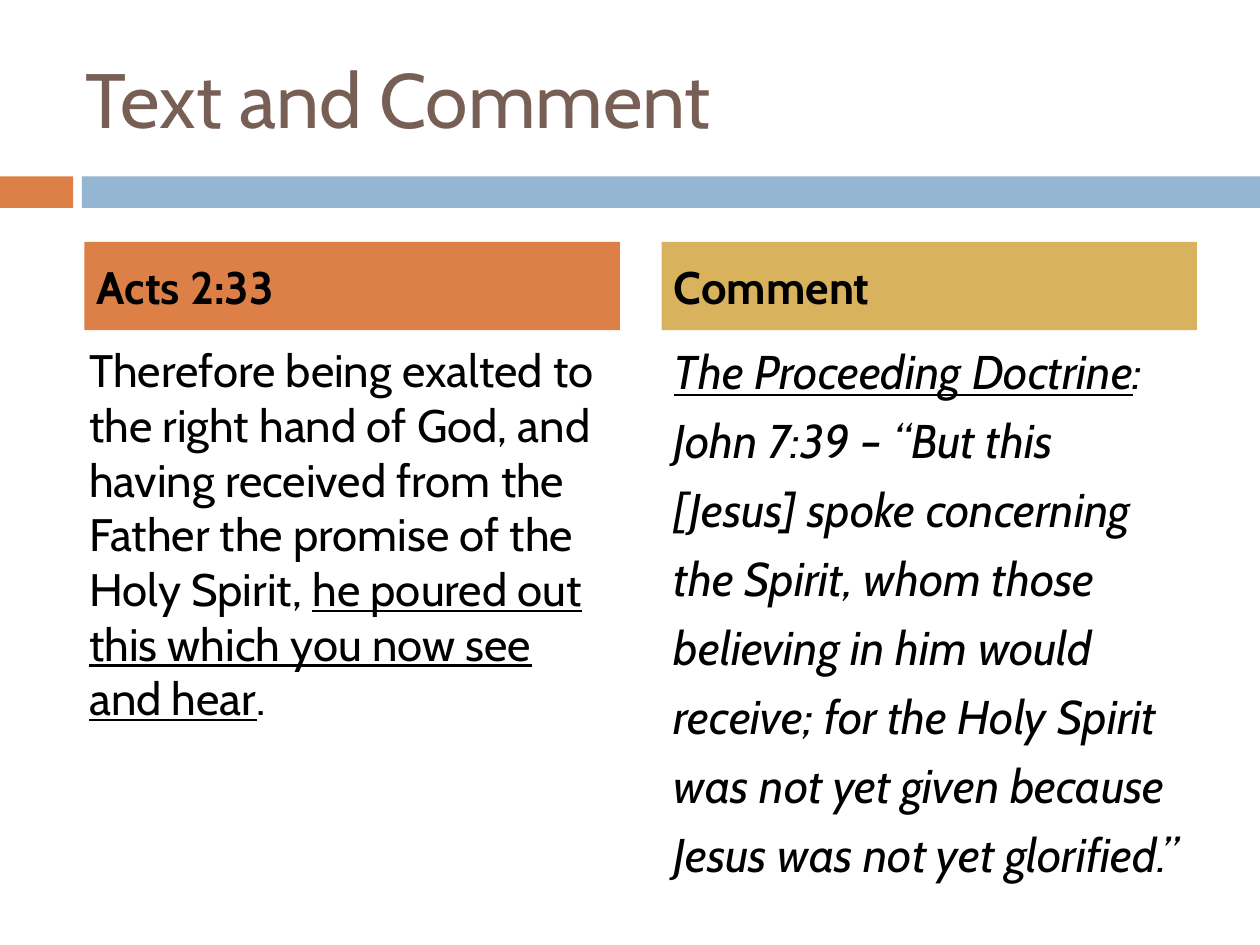
from pptx import Presentation
from pptx.dml.color import RGBColor
from pptx.enum import shapes, text
from pptx.util import Inches, Pt

FONT = "Cabin"
ORANGE = RGBColor(0xDD, 0x80, 0x47)
BLUE = RGBColor(0x94, 0xB6, 0xD2)
GOLD = RGBColor(0xD8, 0xB2, 0x5C)
BROWN = RGBColor(0x77, 0x5F, 0x55)
BLACK = RGBColor(0, 0, 0)
HANG = Inches(0.35)

# Each paragraph is a list of (text, font format) runs.
TITLE = [[("Text and Comment", {"size": Pt(44)})]]
BARS = [((0, 1.4, 0.58, 0.25), ORANGE), ((0.65, 1.4, 9.35, 0.25), BLUE)]
HEADS = [("Acts 2:33", 0.67, ORANGE), ("Comment", 5.25, GOLD)]

plain = {"size": Pt(26)}
VERSE = [[
    ("\t", {"size": Pt(29), "bold": True}),
    ("Therefore being exalted to the right hand of God, and having received "
     "from the Father the promise of the Holy Spirit, ", plain),
    ("he poured out this which you now see and hear",
     {**plain, "underline": True}),
    (".", plain),
]]

slant = {"size": Pt(27), "italic": True}
LINES = [
    "John 7:39 – “But this",
    "[Jesus] spoke concerning",
    "the Spirit, whom those",
    "believing in him would",
    "receive; for the Holy Spirit",
    "was not yet given because",
    "Jesus was not yet glorified.”",
]
NOTE = [[("The Proceeding Doctrine", {**slant, "underline": True}),
         (":", slant)]] + [[(line, slant)] for line in LINES]


def write(shape, paras, color=BLACK, middle=False, hang=False, space=7):
    frame = shape.text_frame
    frame.word_wrap = True
    anchor = text.MSO_ANCHOR
    frame.vertical_anchor = anchor.MIDDLE if middle else anchor.TOP
    if hang:
        frame.margin_right = 0
    for i, runs in enumerate(paras):
        para = frame.add_paragraph() if i else frame.paragraphs[0]
        para.alignment = text.PP_ALIGN.LEFT
        para.space_before = Pt(space)
        if hang:
            props = para._p.get_or_add_pPr()
            props.set("marL", str(HANG))
            props.set("indent", str(-HANG))
        for words, style in runs:
            run = para.add_run()
            run.text = words
            run.font.name = FONT
            run.font.color.rgb = color
            for key, value in style.items():
                setattr(run.font, key, value)


def block(slide, box, color):
    """Add a flat rectangle without outline."""
    rect = slide.shapes.add_shape(shapes.MSO_SHAPE.RECTANGLE,
                                  *map(Inches, box))
    rect.shadow.inherit = False
    rect.fill.solid()
    rect.fill.fore_color.rgb = color
    rect.line.fill.background()
    return rect


def main():
    deck = Presentation()
    deck.slide_width, deck.slide_height = Inches(10), Inches(7.5)
    slide = deck.slides.add_slide(deck.slide_layouts[6])

    for box, color in BARS:
        block(slide, box, color)

    def area(*box):
        return slide.shapes.add_textbox(*map(Inches, box))

    write(area(0.58, 0.3, 8.92, 0.95), TITLE, BROWN, middle=True, space=0)
    write(area(0.26, 2.62, 4.6, 4.32), VERSE, hang=True)
    write(area(5.25, 2.67, 4.25, 3.92), NOTE, hang=True)

    for label, left, color in HEADS:
        head = block(slide, (left, 1.92, 4.25, 0.7), color)
        write(head, [[(label, {**plain, "bold": True})]], middle=True)

    deck.save("out.pptx")


if __name__ == "__main__":
    main()
